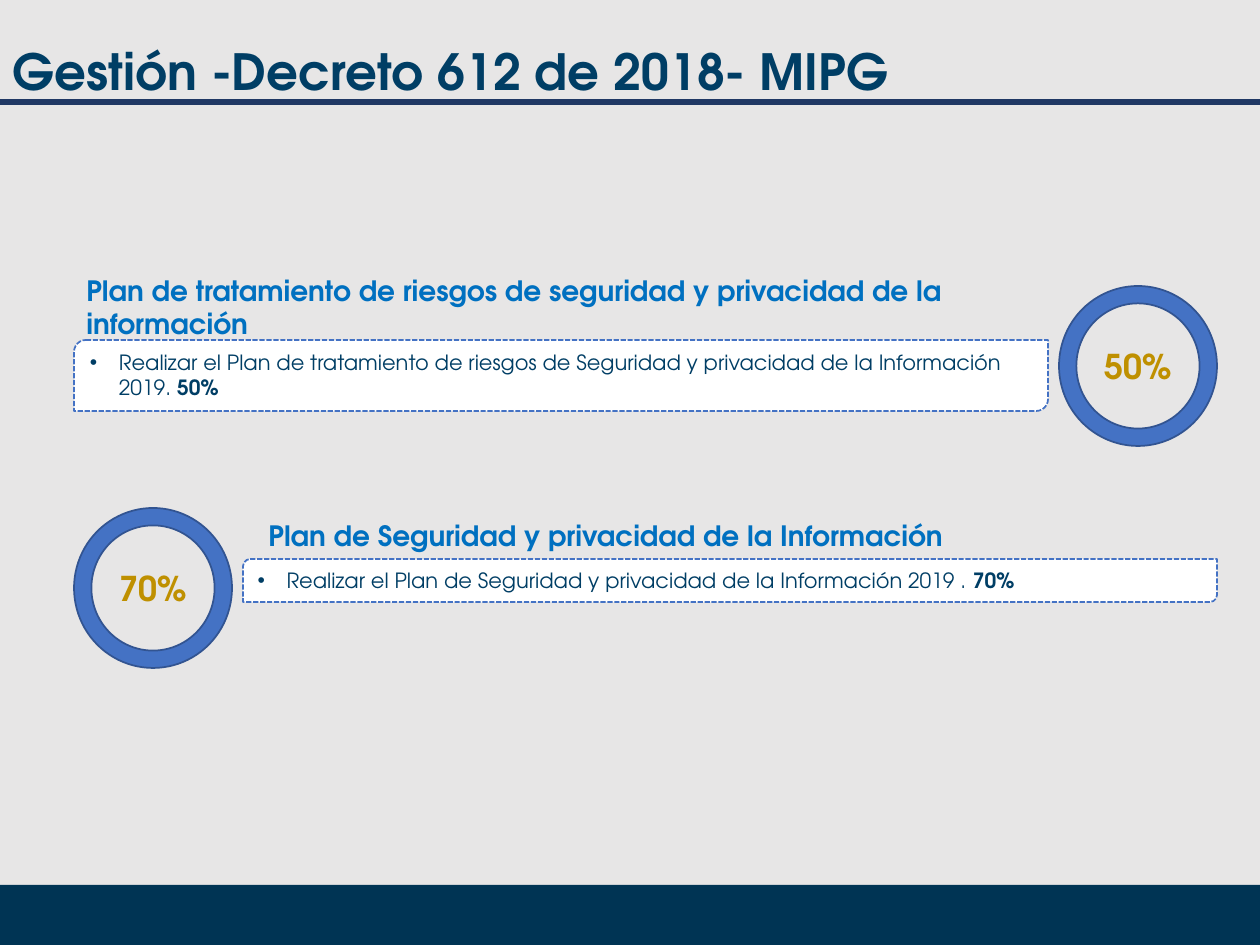
from dataclasses import dataclass

from lxml.etree import SubElement
from pptx import Presentation
from pptx.dml.color import RGBColor
from pptx.enum.dml import MSO_LINE
from pptx.enum.shapes import MSO_CONNECTOR, MSO_SHAPE
from pptx.enum.text import MSO_ANCHOR, MSO_AUTO_SIZE, PP_ALIGN
from pptx.oxml.ns import qn
from pptx.util import Pt

PX = 914400 / 126
FONT = "TeX Gyre Adventor"
BACKGROUND = RGBColor(0xE7, 0xE6, 0xE6)
FOOTER = RGBColor(0x00, 0x34, 0x54)
RULE = RGBColor(0x20, 0x38, 0x64)
INK = RGBColor(0x00, 0x3E, 0x65)
HEADING = RGBColor(0x00, 0x70, 0xC0)
BLUE = RGBColor(0x44, 0x72, 0xC4)
RING_EDGE = RGBColor(0x32, 0x54, 0x91)
GOLD = RGBColor(0xBF, 0x90, 0x00)
WHITE = RGBColor(0xFF, 0xFF, 0xFF)

RING_WIDTH, RING_HEIGHT = 158, 160
LABEL_OFFSET, LABEL_HEIGHT = 53, 54
BULLET_INDENT = 29


@dataclass(frozen=True)
class Box:
    left: int
    top: int
    width: int
    height: int

    def emu(self) -> tuple[int, ...]:
        return tuple(round(v * PX) for v in (self.left, self.top, self.width, self.height))


@dataclass(frozen=True)
class Plan:
    heading: str
    task: str
    progress: str
    heading_box: Box
    task_box: Box
    ring_left: int
    ring_top: int


PLANS = [
    Plan("Plan de tratamiento de riesgos de seguridad y privacidad de la información",
         "Realizar el Plan de tratamiento de riesgos de Seguridad y privacidad "
         "de la Información 2019. ",
         "50%", Box(74, 267, 1008, 81), Box(74, 340, 974, 71), 1059, 286),
    Plan("Plan de Seguridad y privacidad de la Información",
         "Realizar el Plan de Seguridad y privacidad de la Información 2019 . ",
         "70%", Box(256, 512, 901, 47), Box(243, 559, 974, 43), 74, 508),
]


def write(shape, text: str, *, size: float, color: RGBColor, bold: bool = True,
          bold_end: str = "", align=PP_ALIGN.LEFT, anchor=MSO_ANCHOR.TOP,
          bullet: bool = False, auto_size=MSO_AUTO_SIZE.SHAPE_TO_FIT_TEXT) -> None:
    """Fill the shape with one paragraph, closed by an optional bold run."""
    frame = shape.text_frame
    frame.word_wrap = True
    frame.auto_size = auto_size
    frame.vertical_anchor = anchor
    paragraph = frame.paragraphs[0]
    paragraph.alignment = align
    if bullet:
        properties = paragraph._p.get_or_add_pPr()
        indent = round(BULLET_INDENT * PX)
        properties.set("marL", str(indent))
        properties.set("indent", str(-indent))
        SubElement(properties, qn("a:buFont"), typeface="Arial")
        SubElement(properties, qn("a:buChar"), char="•")
    for content, is_bold in ((text, bold), (bold_end, True)):
        if content:
            run = paragraph.add_run()
            run.text = content
            run.font.name = FONT
            run.font.size = Pt(size)
            run.font.bold = is_bold
            run.font.color.rgb = color


def add_filled(shapes, kind, box: Box, fill: RGBColor, line: RGBColor | None = None):
    shape = shapes.add_shape(kind, *box.emu())
    shape.shadow.inherit = False
    shape.fill.solid()
    shape.fill.fore_color.rgb = fill
    if line is None:
        shape.line.fill.background()
    else:
        shape.line.color.rgb = line
        shape.line.width = Pt(1)
    return shape


def add_rule(slide, top: int, right: int) -> None:
    line = slide.shapes.add_connector(
        MSO_CONNECTOR.STRAIGHT, 0, round(top * PX), round(right * PX), round(top * PX))
    line.line.color.rgb = RULE
    line.line.width = Pt(3)
    SubElement(line._element.spPr, qn("a:effectLst"))


def add_task(slide, plan: Plan) -> None:
    shape = add_filled(slide.shapes, MSO_SHAPE.ROUND_2_DIAG_RECTANGLE, plan.task_box, WHITE, BLUE)
    shape.line.dash_style = MSO_LINE.SQUARE_DOT
    write(shape, plan.task, size=12, color=INK, bold=False,
          bold_end=plan.progress, bullet=True)


def add_heading(slide, plan: Plan) -> None:
    heading = slide.shapes.add_textbox(*plan.heading_box.emu())
    write(heading, plan.heading, size=16, color=HEADING)


def add_progress_ring(slide, plan: Plan) -> None:
    shapes = slide.shapes.add_group_shape().shapes
    ring_box = Box(plan.ring_left, plan.ring_top, RING_WIDTH, RING_HEIGHT)
    ring = add_filled(shapes, MSO_SHAPE.DONUT, ring_box, BLUE, RING_EDGE)
    ring.adjustments[0] = 0.11
    label_box = Box(plan.ring_left, plan.ring_top + LABEL_OFFSET, RING_WIDTH, LABEL_HEIGHT)
    label = shapes.add_textbox(*label_box.emu())
    write(label, plan.progress, size=19.5, color=GOLD, align=PP_ALIGN.CENTER)


def main() -> None:
    presentation = Presentation()
    presentation.slide_width = round(1260 * PX)
    presentation.slide_height = round(945 * PX)
    slide = presentation.slides.add_slide(presentation.slide_layouts.get_by_name("Title Only"))
    slide.background.fill.solid()
    slide.background.fill.fore_color.rgb = BACKGROUND

    add_filled(slide.shapes, MSO_SHAPE.RECTANGLE, Box(0, 885, 1260, 60), FOOTER)
    add_rule(slide, 102, 1260)
    title = slide.shapes.title
    title.left, title.top, title.width, title.height = Box(0, 39, 1063, 64).emu()
    write(title, "Gestión -Decreto 612 de 2018- MIPG", size=28.5, color=INK,
          anchor=MSO_ANCHOR.MIDDLE, auto_size=MSO_AUTO_SIZE.NONE)

    for add_part in (add_task, add_heading, add_progress_ring):
        for plan in PLANS:
            add_part(slide, plan)
    presentation.save("out.pptx")


if __name__ == "__main__":
    main()
